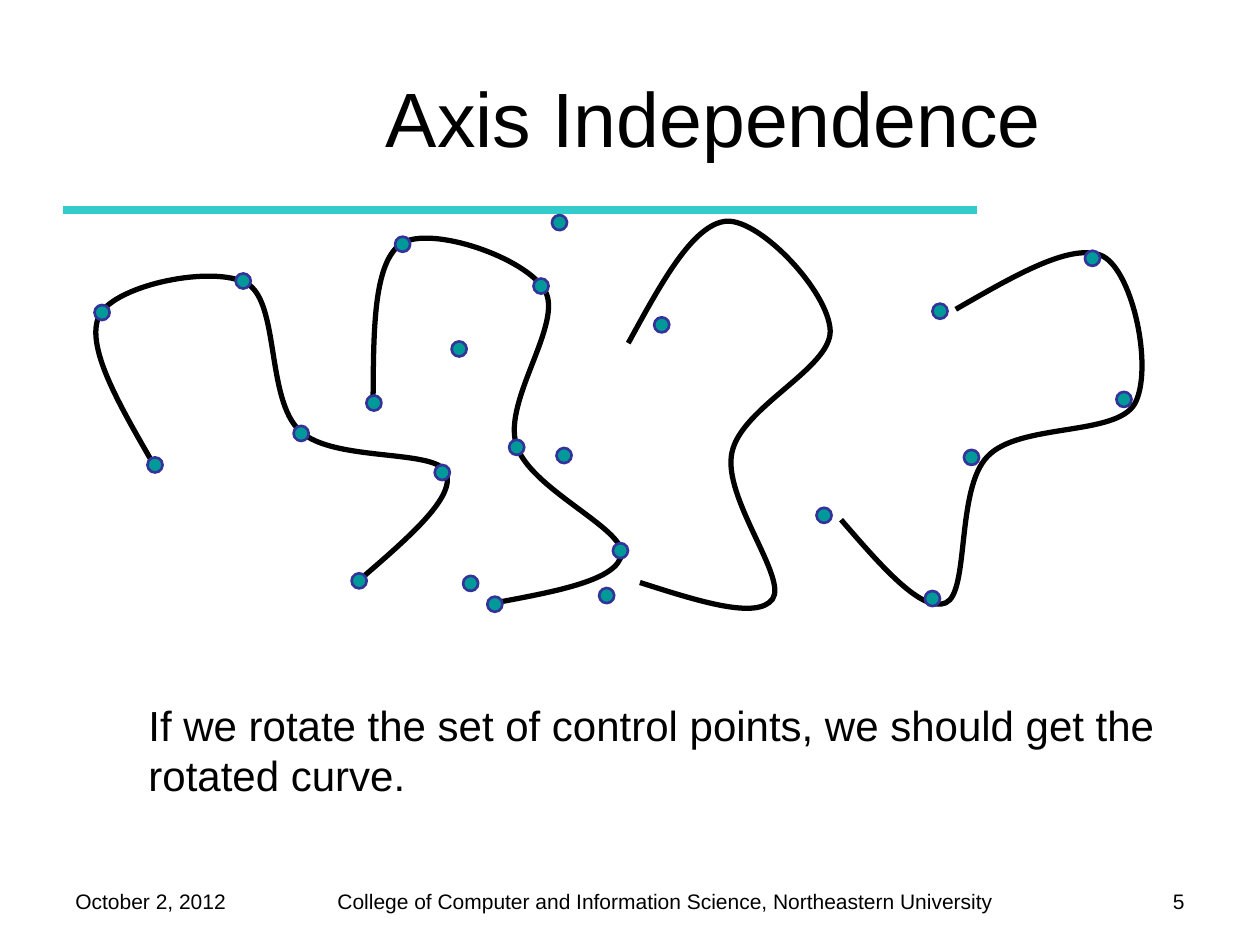
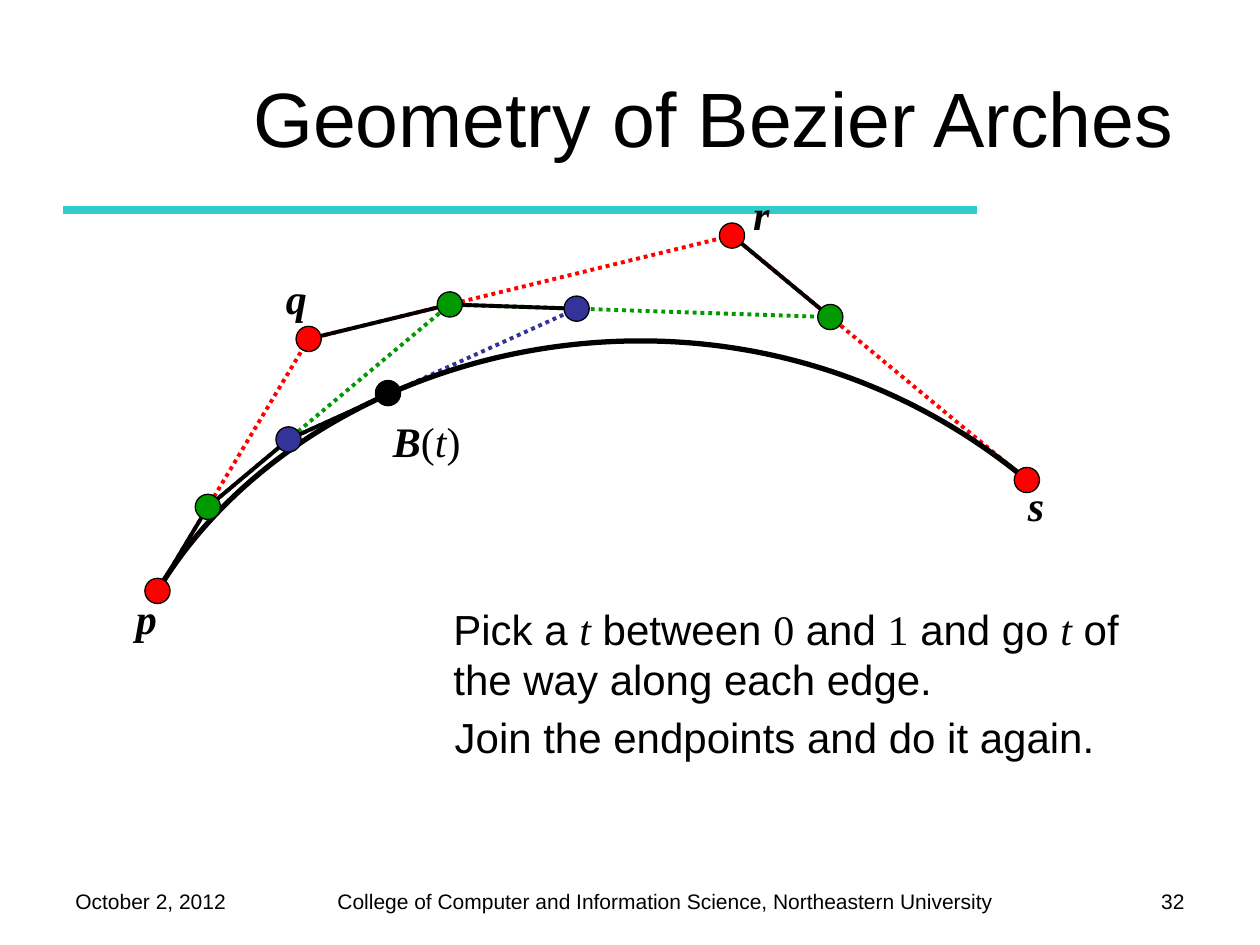
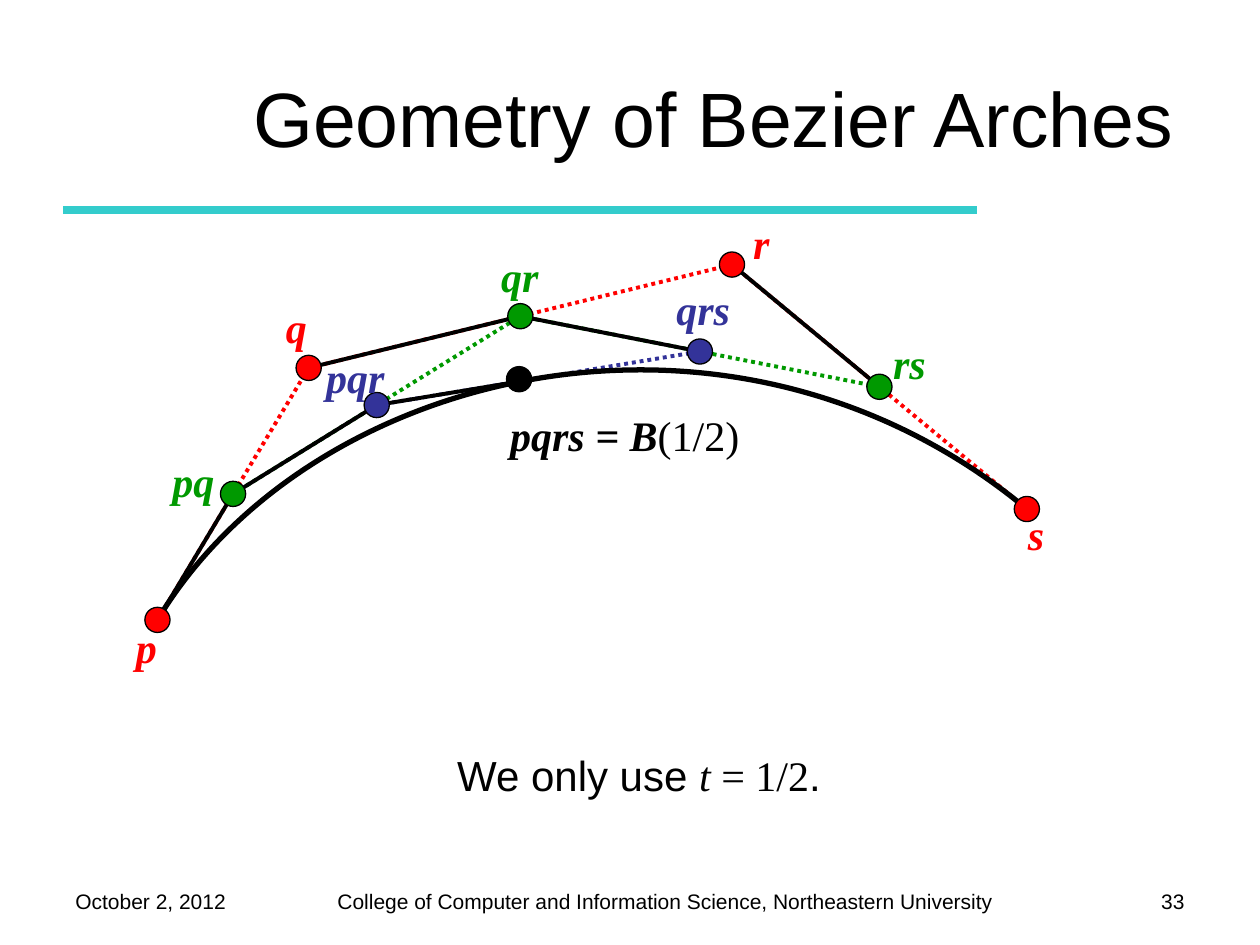
from itertools import pairwise
from math import cos, radians, sin

from lxml.etree import SubElement
from pptx import Presentation
from pptx.dml.color import RGBColor
from pptx.enum.dml import MSO_LINE
from pptx.enum.shapes import MSO_CONNECTOR, MSO_SHAPE
from pptx.enum.text import MSO_ANCHOR, MSO_AUTO_SIZE, PP_ALIGN
from pptx.oxml.ns import qn
from pptx.oxml.xmlchemy import OxmlElement
from pptx.util import Inches, Pt

BLACK = RGBColor(0x00, 0x00, 0x00)
RED = RGBColor(0xFF, 0x00, 0x00)
GREEN = RGBColor(0x00, 0x99, 0x00)
INDIGO = RGBColor(0x33, 0x33, 0x99)
TEAL = RGBColor(0x00, 0x99, 0x99)
AQUA = RGBColor(0x33, 0xCC, 0xCC)

COLS, ROWS = 100, 75
SANS, SERIF = "Arial", "Times New Roman"
PLAIN = (SANS, False, False)
NUMBER = (SERIF, False, False)
VARIABLE = (SERIF, False, True)
POINT = (SERIF, True, True)

WAVE = [(12.1, 36.7), (9.4, 32), (6.7, 27.4), (7.9, 25),
        (9.2, 22.6), (16.9, 21), (19.6, 22.5),
        (22.2, 24), (21.1, 31.7), (23.8, 34.2),
        (26.4, 36.7), (34.6, 35.6), (35.4, 37.5),
        (36.2, 39.4), (32.5, 42.6), (28.8, 45.8)]
WAVE_SHIFTS = [(0, 0, 0), (17.9, 0, 30.3), (36.1, 0.1, 58.6), (57.7, 0.5, 90)]
CONTROLS = [(12.3, 36.9), (8.1, 24.8), (19.3, 22.3), (23.9, 34.4), (35.1, 37.5), (28.5, 46.1)]
CONTROLS_CENTER = (21.6, 34.2)
CONTROL_SETS = [(77.3, 34, 90), (21.6, 34.2, 0), (39.1, 34.2, 29.4), (43.7, 34.1, 57.6)]

ARCH = [(12.5, 46.9), (24.5, 26.9), (58.1, 18.7), (81.5, 38.1)]
LABEL_OFFSETS = {"p": (-2.7, -0.4), "q": (-2.8, -5.8), "r": (0.7, -4.2), "s": (-0.9, -0.5)}
LEVEL_COLORS = [RED, GREEN, INDIGO]


class Deck:
    def __init__(self):
        self.prs = Presentation()
        self.prs.slide_width, self.prs.slide_height = Inches(10), Inches(7.5)
        self.s = None

    def x(self, cols):
        return round(self.prs.slide_width * cols / COLS)

    def y(self, rows):
        return round(self.prs.slide_height * rows / ROWS)

    def at(self, *cells):
        return [f(c) for f, c in zip((self.x, self.y, self.x, self.y), cells)]

    def slide(self, title, number):
        self.s = self.prs.slides.add_slide(self.prs.slide_layouts[6])
        self.text((25.8, 70, 55, 3),
                  [("College of Computer and Information Science, Northeastern University", PLAIN)], size=12)
        self.line((5, 16.7), (77.5, 16.7), AQUA, 4.5)
        self.text((5, 70, 17.5, 3.3), [("October 2, 2012", PLAIN)], size=12)
        self.text((86.7, 70, 8.3, 3.5), [(str(number), PLAIN)], size=12, align=PP_ALIGN.RIGHT)
        self.text((18.3, 3, 76.7, 12.5), [(title, PLAIN)], size=44,
                  align=PP_ALIGN.CENTER, anchor=MSO_ANCHOR.MIDDLE)

    def text(self, box, runs, size=24, color=BLACK, align=PP_ALIGN.LEFT, anchor=MSO_ANCHOR.TOP):
        tf = self.s.shapes.add_textbox(*self.at(*box)).text_frame
        tf.word_wrap = True
        tf.auto_size = MSO_AUTO_SIZE.NONE
        tf.vertical_anchor = anchor
        p = tf.paragraphs[0]
        p.alignment = align
        for words, (name, bold, italic) in runs:
            r = p.add_run()
            r.text = words
            r.font.name, r.font.size = name, Pt(size)
            r.font.bold, r.font.italic = bold, italic
            r.font.color.rgb = color

    def line(self, start, end, color, width=2.25, dash=None):
        c = self.s.shapes.add_connector(MSO_CONNECTOR.STRAIGHT, *self.at(*start, *end))
        c.line.color.rgb = color
        c.line.width = Pt(width)
        if dash:
            c.line.dash_style = dash
        SubElement(c._element.spPr, qn("a:effectLst"))

    def dot(self, center, size, fill, border, width, angle=0):
        left, top = (v - size / 2 for v in center)
        sp = self.s.shapes.add_shape(MSO_SHAPE.OVAL, *self.at(left, top, size, size))
        sp.shadow.inherit = False
        sp.rotation = angle
        sp.fill.solid()
        sp.fill.fore_color.rgb = fill
        sp.line.color.rgb = border
        sp.line.width = Pt(width)

    def curve(self, points, angle=0):
        start, *rest = [self.at(*pt) for pt in points]
        builder = self.s.shapes.build_freeform(*start)
        builder.add_line_segments(rest, close=False)
        sp = builder.convert_to_shape()
        segments = list(sp._element.iter(qn("a:lnTo")))
        outline = segments[0].getparent()
        for i in range(0, len(segments), 3):
            bezier = OxmlElement("a:cubicBezTo")
            for segment in segments[i:i + 3]:
                bezier.append(segment[0])
                outline.remove(segment)
            outline.append(bezier)
        sp.shadow.inherit = False
        sp.rotation = angle
        sp.fill.background()
        sp.line.color.rgb = BLACK
        sp.line.width = Pt(3)

    def arch(self, points, t, curve_dot, label_color):
        levels = [points]
        for color in LEVEL_COLORS:
            edges = list(pairwise(levels[-1]))
            splits = [between(a, b, t) for a, b in edges]
            for a, b in edges:
                self.line(a, b, color, dash=MSO_LINE.ROUND_DOT)
            for (a, _), split in zip(edges, splits):
                self.line(a, split, BLACK)
            levels.append(splits)
        self.curve(points)
        for level, color in zip(levels, LEVEL_COLORS):
            for center in level:
                self.dot(center, 2, color, BLACK, 0.75)
        self.dot(curve_dot, 2, BLACK, BLACK, 0.75)
        for (name, (dx, dy)), (px, py) in zip(LABEL_OFFSETS.items(), points):
            self.text((px + dx, py + dy, 4.7, 5), [(name, POINT)], color=label_color)


def between(a, b, t):
    return tuple(u + (v - u) * t for u, v in zip(a, b))


def shifted(points, dx, dy):
    return [(px + dx, py + dy) for px, py in points]


def turned(points, pivot, center, angle):
    c, s = cos(radians(angle)), sin(radians(angle))
    offsets = shifted(points, -pivot[0], -pivot[1])
    return shifted([(dx * c - dy * s, dx * s + dy * c) for dx, dy in offsets], *center)


def axis_independence(deck):
    deck.slide("Axis Independence", 5)
    for dx, dy, angle in WAVE_SHIFTS:
        deck.curve(shifted(WAVE, dx, dy), angle)
    for cx, cy, angle in CONTROL_SETS:
        for center in turned(CONTROLS, CONTROLS_CENTER, (cx, cy), angle):
            deck.dot(center, 1.2, TEAL, INDIGO, 1.5, angle)
    deck.text((10.8, 55, 82.5, 9), [
        ("If we rotate the set of control points, we should get the rotated curve.", PLAIN)])


def arch_at_t(deck):
    deck.slide("Geometry of Bezier Arches", 32)
    deck.arch(ARCH, 1 / 3, (30.8, 31.2), BLACK)
    deck.text((35, 47.4, 54.9, 9), [
        ("Pick a ", PLAIN), ("t", VARIABLE), (" between ", PLAIN), ("0", NUMBER),
        (" and ", PLAIN), ("1", NUMBER), (" and go ", PLAIN), ("t", VARIABLE),
        (" of the way along each edge.", PLAIN)])
    deck.text((30.2, 32.5, 10.4, 5), [
        ("B", POINT), ("(", NUMBER), ("t", VARIABLE), (")", NUMBER)])
    deck.text((35.1, 56, 54.9, 5), [("Join the endpoints and do it again.", PLAIN)])


def arch_at_half(deck):
    deck.slide("Geometry of Bezier Arches", 33)
    deck.arch(shifted(ARCH, 0, 2.3), 1 / 2, (41.2, 30.1), RED)
    deck.text((35.3, 59, 54.9, 5), [
        ("We only use ", PLAIN), ("t", VARIABLE), (" = 1/2", NUMBER), (".", PLAIN)])
    deck.text((39.5, 32, 21.8, 5), [("pqrs = B", POINT), ("(1/2)", NUMBER)])
    for name, left, top, width, color in [
        ("pq", 12.7, 35.7, 6.6, GREEN),
        ("qr", 38.8, 19.4, 6.6, GREEN),
        ("rs", 69.9, 26.3, 6.6, GREEN),
        ("pqr", 24.9, 27.4, 8.4, INDIGO),
        ("qrs", 52.7, 22, 8.4, INDIGO),
    ]:
        deck.text((left, top, width, 5), [(name, POINT)], color=color)


def main():
    deck = Deck()
    axis_independence(deck)
    arch_at_t(deck)
    arch_at_half(deck)
    deck.prs.save("out.pptx")


if __name__ == "__main__":
    main()
